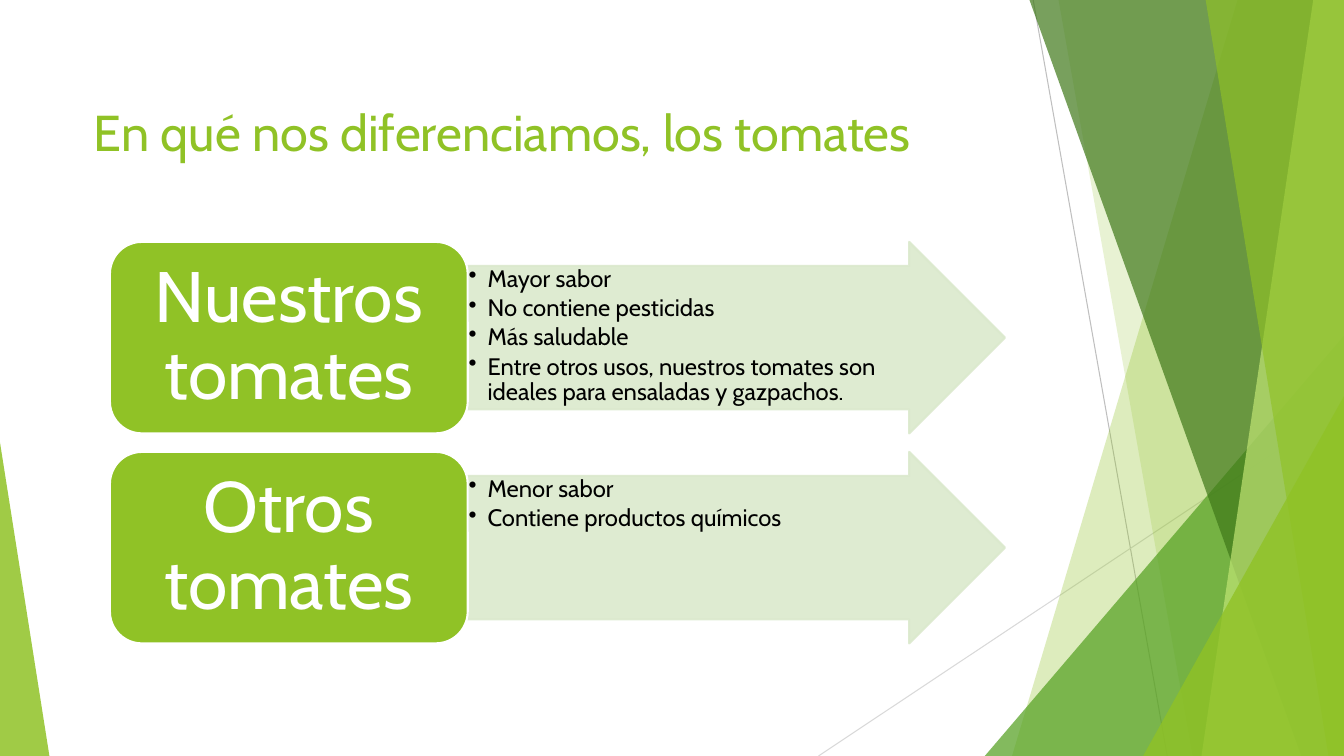
from dataclasses import dataclass

import lxml.etree
import pptx
import pptx.dml.color
import pptx.enum.shapes
import pptx.enum.text
import pptx.oxml.ns
import pptx.util

Pt = pptx.util.Pt
SHAPES = pptx.enum.shapes.MSO_SHAPE
ALIGN = pptx.enum.text.PP_ALIGN
ANCHOR = pptx.enum.text.MSO_ANCHOR
qn = pptx.oxml.ns.qn

SLIDE_WIDTH, SLIDE_HEIGHT = 960, 540
FONT = "Cabin"
COLORS = {
    "green": "90C226",
    "leaf": "54A021",
    "forest": "3F7819",
    "lime": "C0E474",
    "pale": "DBE9CD",
    "white": "FFFFFF",
    "black": "000000",
    "gray": "BFBFBF",
    "light gray": "D9D9D9",
}


@dataclass
class ThinLine:
    start: tuple[float, float]
    end: tuple[float, float]
    color: str


@dataclass
class Band:
    """Strip from the slide's right edge to a slanted left side."""
    top_left: float
    bottom_left: float
    color: str
    opacity: int


@dataclass
class Corner:
    """Right triangle standing on the slide's bottom edge."""
    left: float
    top: float
    right: float
    apex: float
    color: str
    opacity: int


@dataclass
class Comparison:
    heading: str
    points: list[str]


DECORATION = [
    ThinLine((738, 0), (833.76, 540), "gray"),
    ThinLine((960, 290.16), (584.64, 540), "light gray"),
    Band(884.16, 722.88, "green", 30),
    Band(756, 851.76, "green", 20),
    Corner(703.44, 239.76, SLIDE_WIDTH, 1, "leaf", 72),
    Band(735.12, 929.52, "forest", 70),
    Band(938.16, 858.24, "lime", 70),
    Band(861.12, 948.96, "green", 65),
    Corner(816.48, 282.96, SLIDE_WIDTH, 1, "green", 80),
    Corner(0, 316.08, 35.28, 0, "green", 85),
]
COMPARISONS = [
    Comparison("Nuestros tomates", [
        "Mayor sabor",
        "No contiene pesticidas",
        "Más saludable",
        "Entre otros usos, nuestros tomates son ideales para ensaladas y gazpachos.",
    ]),
    Comparison("Otros tomates", ["Menor sabor", "Contiene productos químicos"]),
]
ROW_TOP, ROW_PITCH, ROW_HEIGHT = 172.8, 150, 136.8
BOX_LEFT, BOX_WIDTH, ARROW_WIDTH = 78.48, 255.6, 383.76


def rgb(color: str) -> pptx.dml.color.RGBColor:
    return pptx.dml.color.RGBColor.from_string(COLORS[color])


def apply(target, values: dict) -> None:
    for name, value in values.items():
        setattr(target, name, value)


def set_opacity(element, opacity: int) -> None:
    for color in element.iter(qn("a:srgbClr")):
        lxml.etree.SubElement(color, qn("a:alpha"), val=str(opacity * 1000))


def paint(shape, fill: str, line: str | None = None, opacity: int = 100) -> None:
    shape.shadow.inherit = False
    shape.fill.solid()
    shape.fill.fore_color.rgb = rgb(fill)
    if line:
        shape.line.color.rgb = rgb(line)
        shape.line.width = Pt(1.5)
    else:
        shape.line.fill.background()
    if opacity < 100:
        set_opacity(shape._element.spPr, opacity)


def write(paragraph, text: str, size: float, color: str, layout: dict) -> None:
    run = paragraph.add_run()
    run.text = text
    apply(run.font, {"name": FONT, "size": Pt(size)})
    run.font.color.rgb = rgb(color)
    apply(paragraph, layout)


def set_frame(frame, anchor, horizontal: float, vertical: float) -> None:
    apply(frame, {
        "word_wrap": True,
        "auto_size": pptx.enum.text.MSO_AUTO_SIZE.NONE,
        "vertical_anchor": anchor,
        "margin_left": Pt(horizontal), "margin_right": Pt(horizontal),
        "margin_top": Pt(vertical), "margin_bottom": Pt(vertical),
    })


def add_bullet(paragraph) -> None:
    properties = paragraph._p.get_or_add_pPr()
    properties.set("marL", str(Pt(13.5)))
    properties.set("indent", str(-Pt(13.5)))
    lxml.etree.SubElement(properties, qn("a:buChar"), char="•")


def draw_decoration(slide, part: ThinLine | Band | Corner) -> None:
    if isinstance(part, ThinLine):
        line = slide.shapes.add_connector(
            pptx.enum.shapes.MSO_CONNECTOR.STRAIGHT,
            *map(Pt, part.start + part.end))
        line.line.color.rgb = rgb(part.color)
        line.line.width = Pt(0.75)
        lxml.etree.SubElement(line._element.spPr, qn("a:effectLst"))
        return
    if isinstance(part, Band):
        top = Pt(-0.72)
        right, bottom = Pt(SLIDE_WIDTH), Pt(SLIDE_HEIGHT)
        builder = slide.shapes.build_freeform(Pt(part.top_left), top)
        builder.add_line_segments(
            [(right, top), (right, bottom), (Pt(part.bottom_left), bottom)])
        shape = builder.convert_to_shape()
    else:
        shape = slide.shapes.add_shape(
            SHAPES.ISOSCELES_TRIANGLE, Pt(part.left), Pt(part.top),
            Pt(part.right - part.left), Pt(SLIDE_HEIGHT - part.top))
        shape.adjustments[0] = part.apex
    paint(shape, part.color, opacity=part.opacity)


def draw_comparison(slide, comparison: Comparison, top: float) -> None:
    # Arrow with the bulleted points
    arrow = slide.shapes.add_shape(
        SHAPES.RIGHT_ARROW, Pt(BOX_LEFT + BOX_WIDTH), Pt(top),
        Pt(ARROW_WIDTH), Pt(ROW_HEIGHT))
    arrow.adjustments[0] = 0.75
    paint(arrow, "pale", "pale", opacity=90)
    set_frame(arrow.text_frame, ANCHOR.TOP, 0.75, 0.75)
    for index, point in enumerate(comparison.points):
        frame = arrow.text_frame
        paragraph = frame.add_paragraph() if index else frame.paragraphs[0]
        write(paragraph, point, 17, "black", {
            "level": 1, "alignment": ALIGN.LEFT,
            "line_spacing": 0.9, "space_after": Pt(2.5)})
        add_bullet(paragraph)

    # Heading box
    box = slide.shapes.add_shape(
        SHAPES.ROUNDED_RECTANGLE, Pt(BOX_LEFT), Pt(top),
        Pt(BOX_WIDTH), Pt(ROW_HEIGHT))
    paint(box, "green", "white")
    set_frame(box.text_frame, ANCHOR.MIDDLE, 15, 7.5)
    write(box.text_frame.paragraphs[0], comparison.heading, 51, "white",
          {"alignment": ALIGN.CENTER, "line_spacing": 0.9})


def main() -> None:
    presentation = pptx.Presentation()
    apply(presentation, {"slide_width": Pt(SLIDE_WIDTH),
                         "slide_height": Pt(SLIDE_HEIGHT)})
    slide = presentation.slides.add_slide(presentation.slide_layouts[5])

    # Title
    title = slide.shapes.title
    apply(title, {"left": Pt(59.76), "top": Pt(68.4),
                  "width": Pt(676.8), "height": Pt(103.68)})
    set_frame(title.text_frame, ANCHOR.TOP, 7.2, 3.6)
    write(title.text_frame.paragraphs[0], "En qué nos diferenciamos, los tomates",
          36, "green", {"alignment": ALIGN.LEFT})

    # Background facets, then the comparison rows
    for part in DECORATION:
        draw_decoration(slide, part)
    for row, comparison in enumerate(COMPARISONS):
        draw_comparison(slide, comparison, ROW_TOP + row * ROW_PITCH)

    presentation.save("out.pptx")


if __name__ == "__main__":
    main()
